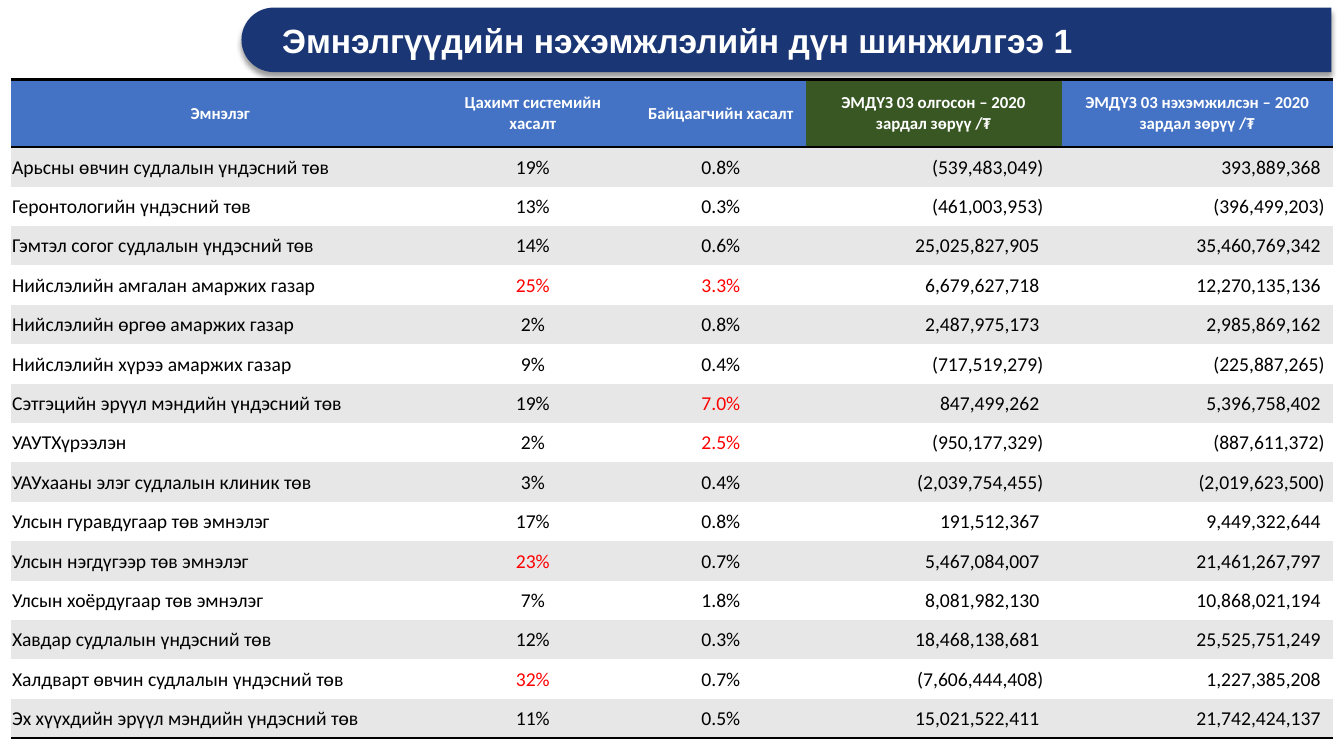
import pptx
import pptx.util
import pptx.dml.color
import pptx.enum.shapes
import pptx.enum.text
import pptx.oxml
import pptx.oxml.ns

Inches = pptx.util.Inches
Pt = pptx.util.Pt
RGBColor = pptx.dml.color.RGBColor
ALIGN = pptx.enum.text.PP_ALIGN
MIDDLE = pptx.enum.text.MSO_ANCHOR.MIDDLE

NAVY = RGBColor(0x1A, 0x36, 0x75)
BLUE = RGBColor(0x44, 0x72, 0xC4)
GREEN = RGBColor(0x38, 0x57, 0x23)
GREY = RGBColor(0xE7, 0xE7, 0xE7)
WHITE = RGBColor(0xFF, 0xFF, 0xFF)
BLACK = RGBColor(0, 0, 0)
RED = RGBColor(0xFF, 0, 0)

TITLE = "Эмнэлгүүдийн нэхэмжлэлийн дүн шинжилгээ 1"
HEADERS = [
    "Эмнэлэг",
    "Цахимт системийн хасалт",
    "Байцаагчийн хасалт",
    "ЭМДҮЗ 03 олгосон – 2020 зардал зөрүү /₮",
    "ЭМДҮЗ 03 нэхэмжилсэн – 2020 зардал зөрүү /₮",
]
HOSPITALS = [
    ("Арьсны өвчин судлалын үндэсний төв", "19%", "0.8%", "(539,483,049)", "393,889,368"),
    ("Геронтологийн үндэсний төв", "13%", "0.3%", "(461,003,953)", "(396,499,203)"),
    ("Гэмтэл согог судлалын үндэсний төв", "14%", "0.6%", "25,025,827,905", "35,460,769,342"),
    ("Нийслэлийн амгалан амаржих газар", "25%", "3.3%", "6,679,627,718", "12,270,135,136"),
    ("Нийслэлийн өргөө амаржих газар", "2%", "0.8%", "2,487,975,173", "2,985,869,162"),
    ("Нийслэлийн хүрээ амаржих газар", "9%", "0.4%", "(717,519,279)", "(225,887,265)"),
    ("Сэтгэцийн эрүүл мэндийн үндэсний төв", "19%", "7.0%", "847,499,262", "5,396,758,402"),
    ("УАУТХүрээлэн", "2%", "2.5%", "(950,177,329)", "(887,611,372)"),
    ("УАУхааны элэг судлалын клиник төв", "3%", "0.4%", "(2,039,754,455)", "(2,019,623,500)"),
    ("Улсын гуравдугаар төв эмнэлэг", "17%", "0.8%", "191,512,367", "9,449,322,644"),
    ("Улсын нэгдүгээр төв эмнэлэг", "23%", "0.7%", "5,467,084,007", "21,461,267,797"),
    ("Улсын хоёрдугаар төв эмнэлэг", "7%", "1.8%", "8,081,982,130", "10,868,021,194"),
    ("Хавдар судлалын үндэсний төв", "12%", "0.3%", "18,468,138,681", "25,525,751,249"),
    ("Халдварт өвчин судлалын үндэсний төв", "32%", "0.7%", "(7,606,444,408)", "1,227,385,208"),
    ("Эх хүүхдийн эрүүл мэндийн үндэсний төв", "11%", "0.5%", "15,021,522,411", "21,742,424,137"),
]
COLUMN_WIDTHS = [4.15, 2.05, 1.68, 2.54, 2.69]
COLUMN_ALIGNS = [ALIGN.LEFT, ALIGN.CENTER, ALIGN.CENTER, ALIGN.RIGHT, ALIGN.RIGHT]
TABLE_HEIGHT = 6.54
HEADER_HEIGHT = 0.67
RED_ABOVE = {1: 20, 2: 2}  # percentage limit by column
AMOUNT_MARGINS = {3: 0.18, 4: 0.08}  # right margin by column
NO_STYLE = "{2D5ABB26-0587-4C30-8999-92F81FD0307C}"


def add_text(paragraph, text, font_name, size, color, bold):
    run = paragraph.add_run()
    run.text = text
    run.font.name = font_name
    run.font.size = Pt(size)
    run.font.bold = bold
    run.font.color.rgb = color


def add_banner(slide):
    # Upright tab turned so that its rounded end points left
    banner = slide.shapes.add_shape(
        pptx.enum.shapes.MSO_SHAPE.ROUND_2_SAME_RECTANGLE,
        Inches(7.48), Inches(-5.01), Inches(0.64), Inches(10.81))
    banner.rotation = 270
    banner.adjustments[0] = 0.5
    banner.adjustments[1] = 0
    banner.fill.solid()
    banner.fill.fore_color.rgb = NAVY
    banner.line.fill.background()
    banner.shadow.inherit = False
    effects = banner._element.spPr.find(pptx.oxml.ns.qn("a:effectLst"))
    effects.append(pptx.oxml.parse_xml(
        f'<a:outerShdw {pptx.oxml.ns.nsdecls("a")} blurRad="{Pt(4)}" dist="{Pt(3)}" '
        'dir="5400000" rotWithShape="0"><a:srgbClr val="000000">'
        '<a:alpha val="40000"/></a:srgbClr></a:outerShdw>'))


def add_title(slide):
    frame = slide.shapes.add_textbox(
        Inches(2.7), Inches(0.1), Inches(10.36), Inches(0.64)).text_frame
    frame.word_wrap = True
    frame.vertical_anchor = MIDDLE
    frame.paragraphs[0].line_spacing = 0.9
    add_text(frame.paragraphs[0], TITLE, "Arial", 24, WHITE, True)


def add_borders(cell, sides):
    properties = cell._tc.get_or_add_tcPr()
    for position, side in enumerate(sides):
        properties.insert(position, pptx.oxml.parse_xml(
            f'<a:ln{side} {pptx.oxml.ns.nsdecls("a")} w="{Pt(2)}"><a:solidFill>'
            f'<a:srgbClr val="{BLACK}"/></a:solidFill></a:ln{side}>'))


def fill_cell(cell, text, align, size, color, bold, background):
    cell.fill.solid()
    cell.fill.fore_color.rgb = background
    cell.vertical_anchor = MIDDLE
    paragraph = cell.text_frame.paragraphs[0]
    paragraph.alignment = align
    add_text(paragraph, text, "Calibri", size, color, bold)


def fill_hospital_cell(cell, text, column, background):
    is_high = column in RED_ABOVE and float(text.rstrip("%")) > RED_ABOVE[column]
    fill_cell(cell, text, COLUMN_ALIGNS[column], 14, RED if is_high else BLACK,
              False, background)
    right = AMOUNT_MARGINS.get(column, 0.01)
    # Digits line up when positive amounts leave room for a bracket
    if column in AMOUNT_MARGINS and not text.endswith(")"):
        right += 0.04
    cell.margin_left = cell.margin_top = Inches(0.01)
    cell.margin_right = Inches(right)
    cell.margin_bottom = 0


def add_hospital_table(slide):
    frame = slide.shapes.add_table(
        len(HOSPITALS) + 1, len(HEADERS), Inches(0.11), Inches(0.79),
        Inches(sum(COLUMN_WIDTHS)), Inches(TABLE_HEIGHT))
    table = frame.table
    table.first_row = table.horz_banding = False
    table._tbl.tblPr.find(pptx.oxml.ns.qn("a:tableStyleId")).text = NO_STYLE

    for column, width in zip(table.columns, COLUMN_WIDTHS):
        column.width = Inches(width)
    for row in table.rows:
        row.height = Inches((TABLE_HEIGHT - HEADER_HEIGHT) / len(HOSPITALS))
    table.rows[0].height = Inches(HEADER_HEIGHT)

    # Header row
    for column, header in enumerate(HEADERS):
        cell = table.cell(0, column)
        fill_cell(cell, header, ALIGN.CENTER, 12, WHITE, True,
                  GREEN if column == 3 else BLUE)
        add_borders(cell, "TB")

    # Hospital rows
    for row, hospital in enumerate(HOSPITALS, start=1):
        for column, text in enumerate(hospital):
            cell = table.cell(row, column)
            fill_hospital_cell(cell, text, column, GREY if row % 2 else WHITE)
            if row == len(HOSPITALS):
                add_borders(cell, "B")


def main():
    presentation = pptx.Presentation()
    presentation.slide_width = Inches(13.33)
    presentation.slide_height = Inches(7.5)
    slide = presentation.slides.add_slide(presentation.slide_layouts[6])
    add_banner(slide)
    add_title(slide)
    add_hospital_table(slide)
    presentation.save("out.pptx")


if __name__ == "__main__":
    main()
